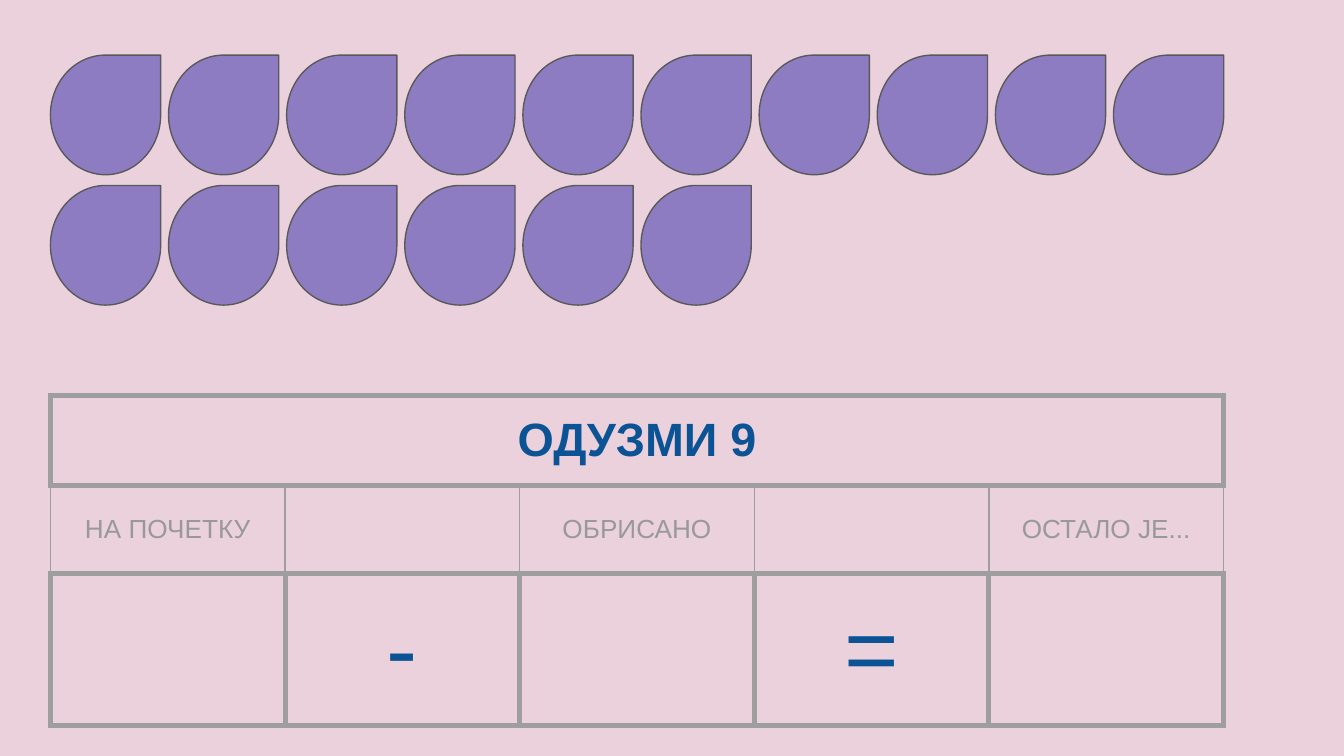
from dataclasses import dataclass

from lxml import etree
from pptx import Presentation
from pptx import util as u
from pptx.dml.color import RGBColor
from pptx.enum import shapes, text
from pptx.oxml import ns


@dataclass(frozen=True)
class Theme:
    back: str = "EAD1DC"
    drop: str = "8E7CC3"
    edge: str = "595959"
    grid: str = "9E9E9E"
    blue: str = "0B5394"
    gray: str = "999999"
    font: str = "Arial"
    title: int = 25
    label: int = 14
    sign: int = 50
    thin: float = 0.75
    thick: float = 3


@dataclass(frozen=True)
class Row:
    height: float
    words: tuple[str, ...]
    size: int
    color: str
    side: float
    bold: bool = False


THEME = Theme()
LEFT = 3 / 8
SPAN = 8.73  # shared width of the table and the full row of drops
COLS = 5
FULL = 10
DROP_W, DROP_H = 0.82, 0.89

ROWS = (
    Row(0.67, ("ОДУЗМИ 9", "", "", "", ""), THEME.title, THEME.blue, THEME.thick, True),
    Row(0.66, ("НА ПОЧЕТКУ", "", "ОБРИСАНО", "", "ОСТАЛО ЈЕ..."),
        THEME.label, THEME.gray, THEME.thin),
    Row(1.13, ("", "-", "", "=", ""), THEME.sign, THEME.blue, THEME.thick),
)


def rgb(code: str) -> RGBColor:
    return RGBColor.from_string(code)


def add_drops(slide, top: float, count: int) -> None:
    step = (SPAN - DROP_W) / (FULL - 1)
    for i in range(count):
        drop = slide.shapes.add_shape(
            shapes.MSO_SHAPE.TEAR, u.Inches(LEFT + i * step), u.Inches(top),
            u.Inches(DROP_W), u.Inches(DROP_H))
        drop.shadow.inherit = False
        drop.fill.solid()
        drop.fill.fore_color.rgb = rgb(THEME.drop)
        drop.line.color.rgb = rgb(THEME.edge)
        drop.line.width = u.Pt(THEME.thin)


def set_edges(cell, side: float) -> None:
    props = cell._tc.get_or_add_tcPr()
    widths = {"L": side, "R": side, "T": THEME.thick, "B": THEME.thick}
    for key, width in widths.items():
        line = etree.SubElement(props, ns.qn(f"a:ln{key}"), w=str(u.Pt(width)))
        fill = etree.SubElement(line, ns.qn("a:solidFill"))
        etree.SubElement(fill, ns.qn("a:srgbClr"), val=THEME.grid)


def fill_cell(cell, word: str, row: Row) -> None:
    set_edges(cell, row.side)
    cell.fill.background()
    cell.vertical_anchor = text.MSO_ANCHOR.MIDDLE
    cell.margin_left = cell.margin_right = u.Inches(0.1)
    cell.margin_top = cell.margin_bottom = u.Inches(0.1)
    if not word:
        return
    cell.text = word
    para = cell.text_frame.paragraphs[0]
    para.alignment = text.PP_ALIGN.CENTER
    para.font.name = THEME.font
    para.font.size = u.Pt(row.size)
    para.font.bold = row.bold
    para.font.color.rgb = rgb(row.color)


def add_sum(slide) -> None:
    frame = slide.shapes.add_table(
        len(ROWS), COLS, u.Inches(LEFT), u.Inches(2.94),
        u.Inches(SPAN), u.Inches(sum(r.height for r in ROWS)))
    table = frame.table
    table.first_row = table.horz_banding = False
    for i, row in enumerate(ROWS):
        table.rows[i].height = u.Inches(row.height)
        for j, word in enumerate(row.words):
            fill_cell(table.cell(i, j), word, row)
    table.cell(0, 0).merge(table.cell(0, COLS - 1))


def main() -> None:
    deck = Presentation()
    deck.slide_width = u.Inches(10)
    deck.slide_height = u.Inches(10 * 9 / 16)
    slide = deck.slides.add_slide(deck.slide_layouts[6])
    slide.background.fill.solid()
    slide.background.fill.fore_color.rgb = rgb(THEME.back)

    # Subtraction table
    add_sum(slide)

    # Sixteen drops to count
    add_drops(slide, 0.41, FULL)
    add_drops(slide, 1.38, 6)

    deck.save("out.pptx")


if __name__ == "__main__":
    main()
